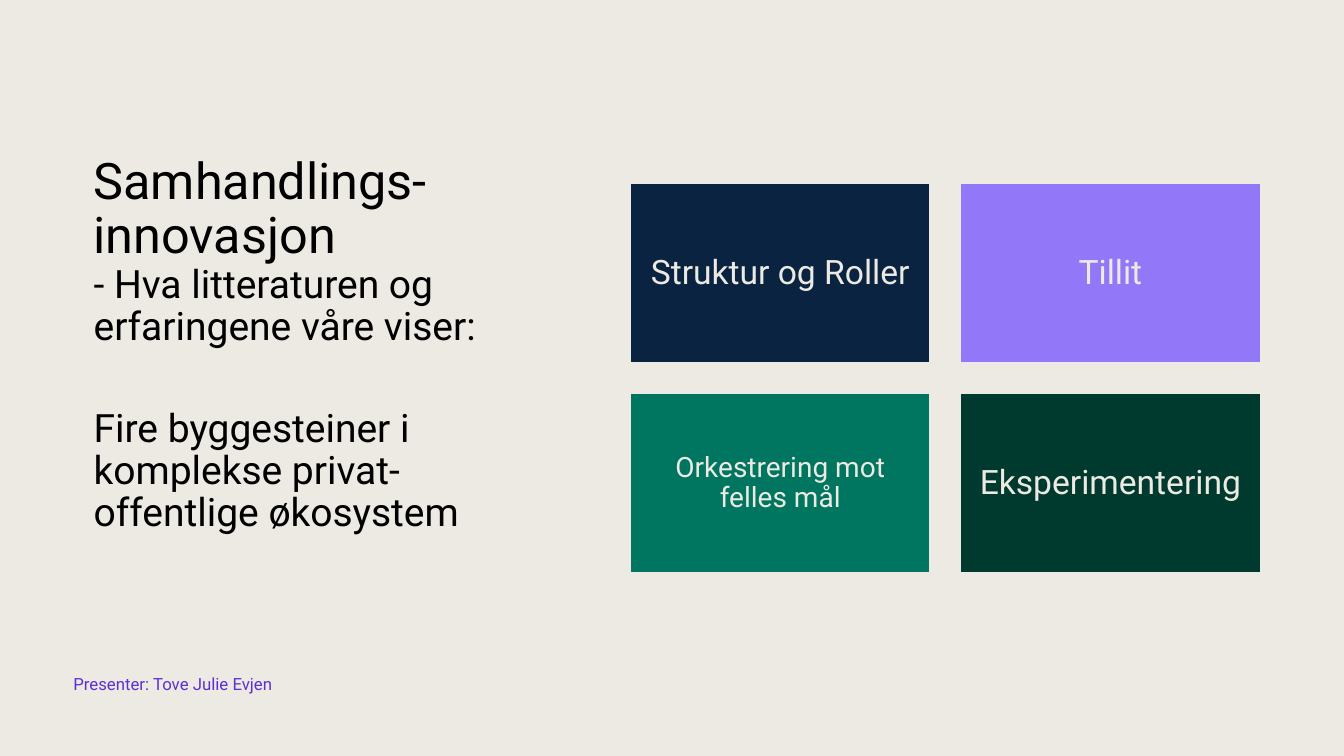
from pptx import Presentation
from pptx.dml.color import RGBColor
from pptx.enum.shapes import MSO_SHAPE
from pptx.enum.text import MSO_ANCHOR, MSO_AUTO_SIZE, PP_ALIGN
from pptx.util import Cm, Pt

# Content
FONT = "Roboto"
BACKGROUND = "ECEAE2"
# Title paragraphs: lines, size, space before
TITLE = [
    (["Samhandlings-", "innovasjon"], 36, 0),
    (["- Hva litteraturen og erfaringene våre viser:"], 27.9, 0),
    (["Fire byggesteiner i komplekse privat-offentlige økosystem"], 27.9, 42.5),
]
# Building blocks: text, size, fill
BLOCKS = [
    ("Struktur og Roller", 24, "0A2341"),
    ("Tillit", 24, "9377F9"),
    ("Orkestrering mot felles mål", 20, "007661"),
    ("Eksperimentering", 24, "003A2F"),
]
PRESENTER = "Presenter: Tove Julie Evjen"

# Grid of blocks, in centimetres
COLUMNS = 2
GRID_LEFT, GRID_TOP = 15.88, 4.62
BLOCK_WIDTH, BLOCK_HEIGHT, GAP = 7.57, 4.54, 0.75


def color(value):
    return RGBColor.from_string(value)


def add_span(para, text, size, ink):
    span = para.add_run()
    span.text = text
    span.font.name = FONT
    span.font.size = Pt(size)
    span.font.bold = False
    span.font.color.rgb = color(ink)


def set_frame(frame, anchor, inset):
    frame.word_wrap = True
    frame.auto_size = MSO_AUTO_SIZE.NONE
    frame.vertical_anchor = anchor
    frame.margin_left = frame.margin_right = Cm(inset)
    frame.margin_top = frame.margin_bottom = Cm(min(inset, 0.25))


def add_title(page):
    title = page.shapes.title
    title.left, title.top = Cm(2.11), Cm(3.68)
    title.width, title.height = Cm(10.69), Cm(12.67)
    frame = title.text_frame
    set_frame(frame, MSO_ANCHOR.TOP, 0.25)
    for index, (lines, size, space) in enumerate(TITLE):
        para = frame.add_paragraph() if index else frame.paragraphs[0]
        para.alignment = PP_ALIGN.LEFT
        para.line_spacing = 0.9
        para.space_before = Pt(space)
        for number, line in enumerate(lines):
            if number:
                para.add_line_break()
            add_span(para, line, size, "000000")


def add_blocks(page):
    for index, (text, size, fill) in enumerate(BLOCKS):
        row, column = divmod(index, COLUMNS)
        block = page.shapes.add_shape(
            MSO_SHAPE.RECTANGLE,
            Cm(GRID_LEFT + column * (BLOCK_WIDTH + GAP)),
            Cm(GRID_TOP + row * (BLOCK_HEIGHT + GAP)),
            Cm(BLOCK_WIDTH), Cm(BLOCK_HEIGHT))
        block.shadow.inherit = False
        block.fill.solid()
        block.fill.fore_color.rgb = color(fill)
        block.line.color.rgb = color(BACKGROUND)
        block.line.width = Pt(1.5)
        set_frame(block.text_frame, MSO_ANCHOR.MIDDLE, 0.25)
        para = block.text_frame.paragraphs[0]
        para.alignment = PP_ALIGN.CENTER
        para.line_spacing = 0.9
        add_span(para, text, size, BACKGROUND)


def add_presenter(page):
    box = page.shapes.add_textbox(Cm(1.85), Cm(16.97), Cm(10.08), Cm(0.48))
    set_frame(box.text_frame, MSO_ANCHOR.TOP, 0)
    add_span(box.text_frame.paragraphs[0], PRESENTER, 12, "5E2FD2")


def main():
    deck = Presentation()
    deck.slide_width, deck.slide_height = Cm(33.87), Cm(19.05)
    page = deck.slides.add_slide(deck.slide_layouts[5])
    page.background.fill.solid()
    page.background.fill.fore_color.rgb = color(BACKGROUND)
    add_title(page)
    add_blocks(page)
    add_presenter(page)
    deck.save("out.pptx")


if __name__ == "__main__":
    main()
